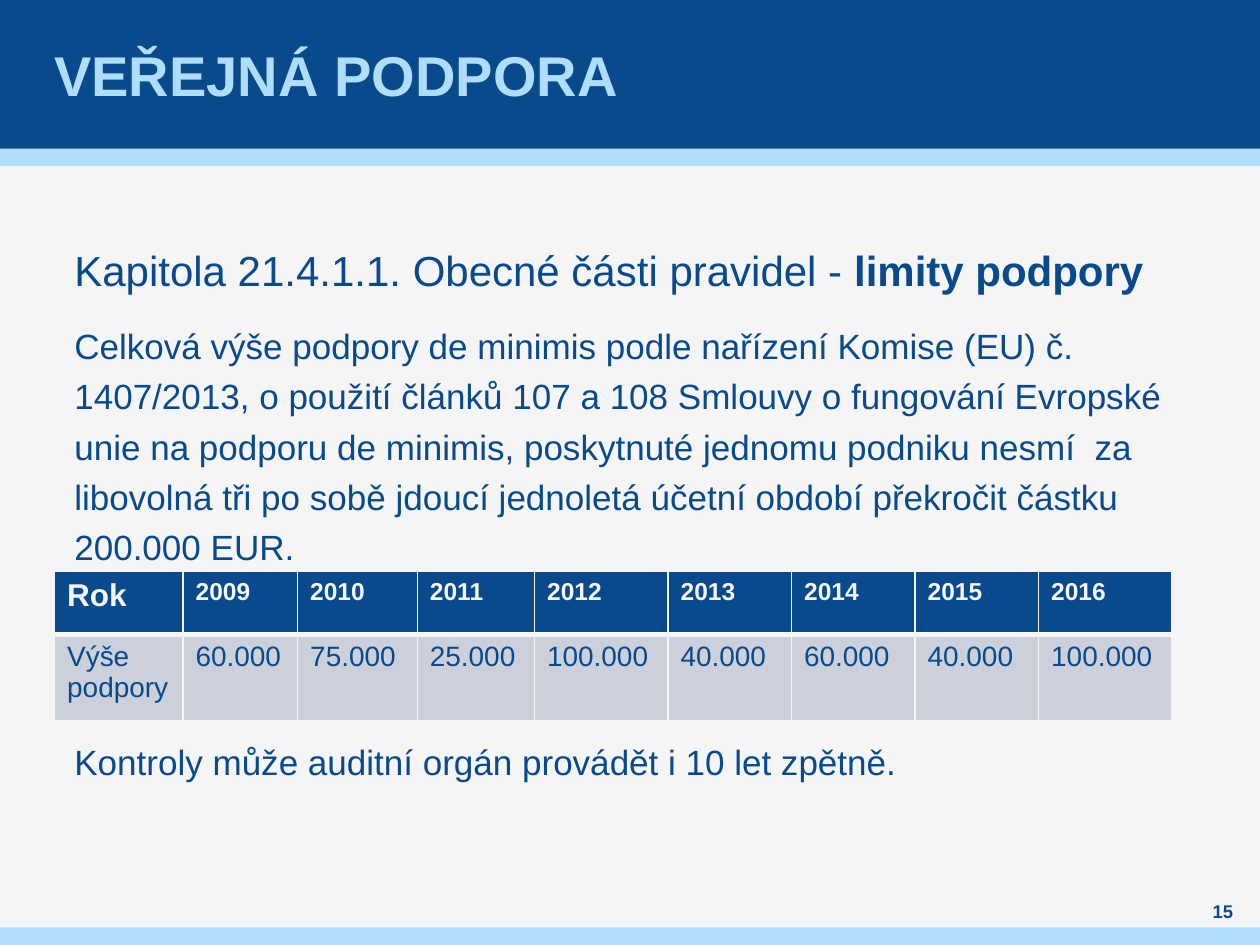
import pptx
import pptx.util
import pptx.dml.color
import pptx.enum.shapes
import pptx.enum.text
import pptx.oxml
import pptx.oxml.ns
from dataclasses import dataclass

Pt = pptx.util.Pt
Align = pptx.enum.text.PP_ALIGN
Anchor = pptx.enum.text.MSO_ANCHOR


@dataclass(frozen=True)
class Theme:
    font: str = "Arial"
    navy: str = "084A8B"
    sky: str = "AFDDFA"
    paper: str = "F5F5F5"
    grey: str = "CCD0DA"
    title: float = 32
    heading: float = 24
    body: float = 20
    label: float = 18
    value: float = 16
    year: float = 14
    number: float = 10.5


THEME = Theme()
YEARS = ["Rok", *(str(year) for year in range(2009, 2017))]
LIMITS = ["Výše podpory", "60.000", "75.000", "25.000", "100.000",
          "40.000", "60.000", "40.000", "100.000"]
COLUMNS = [73.4, 65.5, 68.4, 67, 76.3, 70.6, 70.6, 70.6, 76.3]
HEADING = "Kapitola 21.4.1.1. Obecné části pravidel - "
RULE = ("Celková výše podpory de minimis podle nařízení Komise (EU) č. 1407/2013, "
        "o použití článků 107 a 108 Smlouvy o fungování Evropské unie na podporu "
        "de minimis, poskytnuté jednomu podniku nesmí  za libovolná tři po sobě "
        "jdoucí jednoletá účetní období překročit částku 200.000 EUR.")
CLOSING = "Kontroly může auditní orgán provádět i 10 let zpětně."


def colour(value):
    return pptx.dml.color.RGBColor.from_string(value)


def apply(target, **values):
    for name, value in values.items():
        setattr(target, name, value)


def add_span(para, text, size, ink, bold=False):
    span = para.add_run()
    span.text = text
    apply(span.font, name=THEME.font, size=Pt(size), bold=bold)
    span.font.color.rgb = colour(ink)


def add_frame(page, box, anchor, side=0):
    frame = page.shapes.add_textbox(*map(Pt, box)).text_frame
    apply(frame, word_wrap=True, vertical_anchor=anchor, margin_left=Pt(side),
          margin_right=Pt(side), margin_top=0, margin_bottom=0)
    return frame


def add_band(page, box, fill):
    band = page.shapes.add_shape(
        pptx.enum.shapes.MSO_SHAPE.RECTANGLE, *map(Pt, box))
    band.shadow.inherit = False
    band.fill.solid()
    band.fill.fore_color.rgb = colour(fill)
    band.line.fill.background()


def add_header(page, box):
    left, top, width, height = box
    stripe = 10
    bar = height - stripe
    add_band(page, (left, top + bar, width, stripe), THEME.sky)
    add_band(page, (left, top, width, bar), THEME.navy)
    frame = add_frame(page, (left + 28, top, width - 57, bar), Anchor.MIDDLE, 3)
    add_span(frame.paragraphs[0], "VEŘEJNÁ PODPORA", THEME.title, THEME.sky, True)


def add_body(page, box):
    frame = add_frame(page, box, Anchor.TOP)
    line, gap = 28.8, 6
    table_room = 2 * (line + 2 * gap)
    blocks = [
        (gap, THEME.heading, [(HEADING, False), ("limity podpory", True)]),
        (gap, THEME.body, [(RULE, False)]),
        (gap + table_room, THEME.body, [(CLOSING, False)]),
    ]
    for index, (before, size, spans) in enumerate(blocks):
        para = frame.add_paragraph() if index else frame.paragraphs[0]
        apply(para, line_spacing=Pt(line), space_before=Pt(before),
              space_after=Pt(gap))
        for text, bold in spans:
            add_span(para, text, size, THEME.navy, bold)


def add_borders(cell, widths):
    properties = cell._tc.get_or_add_tcPr()
    namespace = pptx.oxml.ns.nsdecls("a")
    for index, (side, width) in enumerate(widths.items()):
        properties.insert(index, pptx.oxml.parse_xml(
            f'<a:ln{side} {namespace} w="{Pt(width)}"><a:solidFill>'
            f'<a:srgbClr val="{THEME.paper}"/></a:solidFill></a:ln{side}>'))


def fill_cell(cell, text, size, ink, bold, fill, borders):
    cell.fill.solid()
    cell.fill.fore_color.rgb = colour(fill)
    add_span(cell.text_frame.paragraphs[0], text, size, ink, bold)
    add_borders(cell, borders)


def add_limits(page, box):
    table = page.shapes.add_table(2, len(COLUMNS), *map(Pt, box)).table
    for column, width in zip(table.columns, COLUMNS):
        column.width = Pt(width)
    table.rows[0].height = Pt(36)
    table.rows[1].height = Pt(box[3] - 36)
    for index, (year, limit) in enumerate(zip(YEARS, LIMITS)):
        size = THEME.year if index else THEME.label
        fill_cell(table.cell(0, index), year, size, THEME.paper, True,
                  THEME.navy, {"L": 1, "R": 1, "T": 1, "B": 3})
        fill_cell(table.cell(1, index), limit, THEME.value, THEME.navy, False,
                  THEME.grey, {"L": 1, "R": 1, "T": 3, "B": 1})


def add_footer(page, box):
    left, top, width, height = box
    add_band(page, box, THEME.sky)
    frame = add_frame(page, (left + width - 39.6, top - 16.6, 36.7, 14.4),
                      Anchor.MIDDLE)
    para = frame.paragraphs[0]
    para.alignment = Align.CENTER
    add_span(para, "15", THEME.number, THEME.navy, True)


def main():
    deck = pptx.Presentation()
    apply(deck, slide_width=Pt(720), slide_height=Pt(540))
    page = deck.slides.add_slide(deck.slide_layouts[6])
    page.background.fill.solid()
    page.background.fill.fore_color.rgb = colour(THEME.paper)
    add_header(page, (0, 0, 720, 95))
    add_body(page, (42.5, 139.7, 635, 340))
    add_limits(page, (31.2, 326.7, sum(COLUMNS), 85))
    add_footer(page, (0, 530, 720, 10))
    deck.save("out.pptx")


if __name__ == "__main__":
    main()
